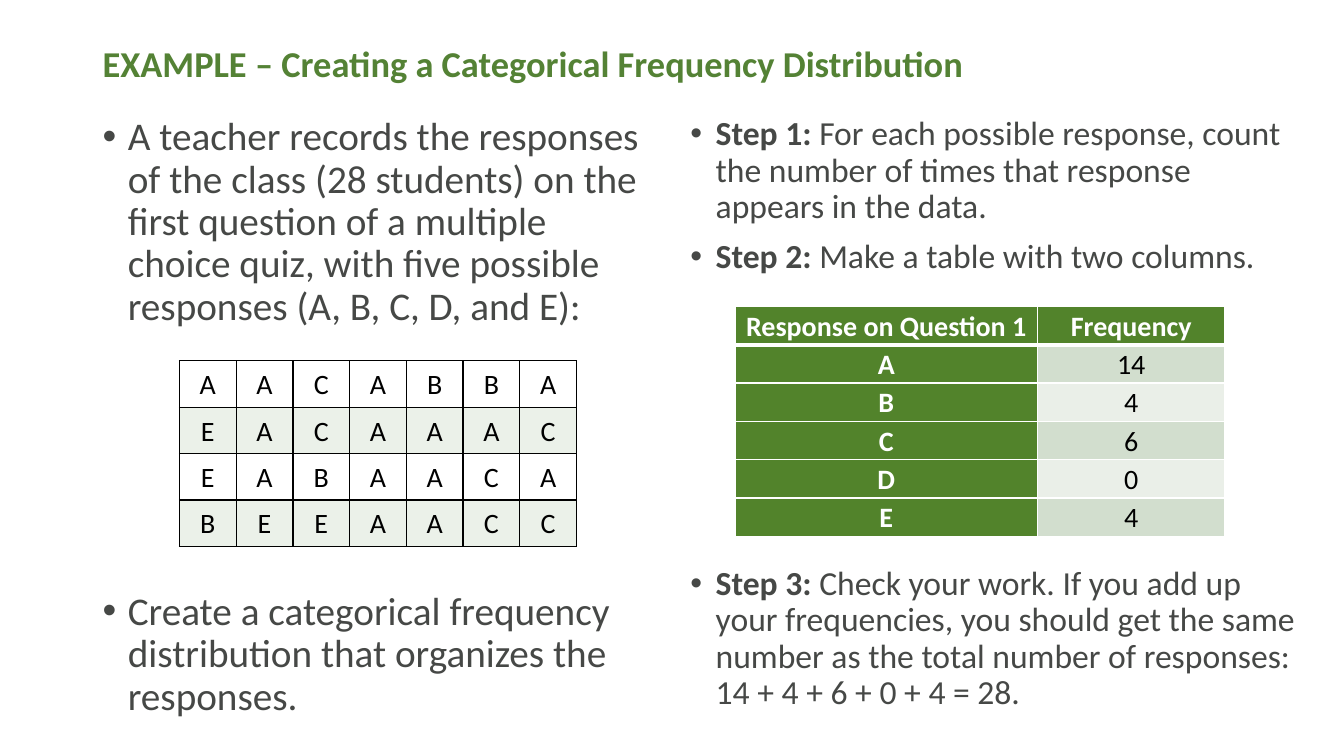
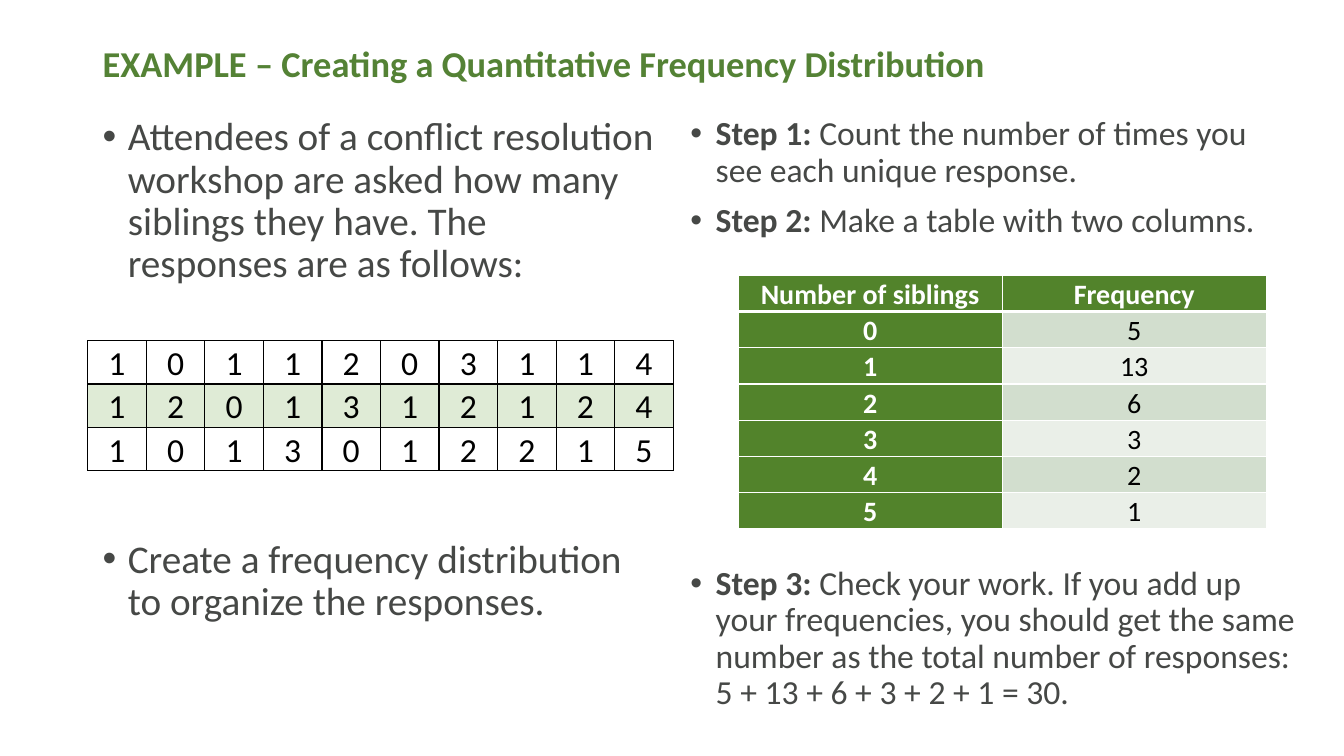
from lxml import etree
from pptx import Presentation
from pptx import util as u
from pptx.dml.color import RGBColor
from pptx.enum import text
from pptx.oxml.ns import qn

COLORS = {
    "title": "548235", "body": "464846", "black": "000000", "white": "FFFFFF",
    "header": "52832B", "band_dark": "D2DECE", "band_light": "EAEFE8",
}
FONT = "Calibri"
LEFT, RIGHT, TOP = 0.92, 6.75, 1.11
STEP_2 = ("Step 2:", " Make a table with two columns.")
CHECK = (" Check your work. If you add up your frequencies, you should get the same "
         "number as the total number of responses: ")

SLIDES = [
    {
        "title": "EXAMPLE – Creating a Categorical Frequency Distribution",
        "problem": "A teacher records the responses of the class (28 students) on the first "
                   "question of a multiple choice quiz, with five possible responses "
                   "(A, B, C, D, and E):",
        "data": ["AACABBA", "EACAAAC", "EABAACA", "BEEAACC"],
        "data_box": (1.78, 3.58, 3.94), "data_row": 0.46, "data_size": 20,
        "data_band": "EBF1E9",
        "task": "Create a categorical frequency distribution that organizes the responses.",
        "task_top": 5.82,
        "step_1": " For each possible response, count the number of times that response "
                  "appears in the data.",
        "frequencies": [("Response on Question 1", "Frequency"), ("A", "14"), ("B", "4"),
                        ("C", "6"), ("D", "0"), ("E", "4")],
        "frequency_place": (7.29, 3.04), "frequency_columns": (3, 1.86),
        "frequency_row": 0.38,
        "sum": "14 + 4 + 6 + 0 + 4 = 28.",
    },
    {
        "title": "EXAMPLE – Creating a Quantitative Frequency Distribution",
        "problem": "Attendees of a conflict resolution workshop are asked how many siblings "
                   "they have. The responses are as follows:",
        "data": ["1011203114", "1201312124", "1013012215"],
        "data_box": (0.87, 3.38, 5.81), "data_row": 0.43, "data_size": 24,
        "data_band": "DFEBD6",
        "task": "Create a frequency distribution to organize the responses.",
        "task_top": 5.3,
        "step_1": " Count the number of times you see each unique response.",
        "frequencies": [("Number of siblings", "Frequency"), ("0", "5"), ("1", "13"),
                        ("2", "6"), ("3", "3"), ("4", "2"), ("5", "1")],
        "frequency_place": (7.32, 2.73), "frequency_columns": (2.62, 2.62),
        "frequency_row": 0.36,
        "sum": "5 + 13 + 6 + 3 + 2 + 1 = 30.",
    },
]


def add_text(slide, box, paragraphs, size, color="body", bullets=True):
    """Add a text box; each paragraph is a (bold part, regular part) pair."""
    frame = slide.shapes.add_textbox(*map(u.Inches, box)).text_frame
    frame.word_wrap = True
    if not bullets:
        frame.vertical_anchor = text.MSO_ANCHOR.MIDDLE
    for index, parts in enumerate(paragraphs):
        paragraph = frame.add_paragraph() if index else frame.paragraphs[0]
        paragraph.line_spacing = 0.9
        if index:
            paragraph.space_before = u.Pt(10)
        if bullets:
            properties = paragraph._p.get_or_add_pPr()
            properties.set("marL", str(u.Inches(0.25)))
            properties.set("indent", str(u.Inches(-0.25)))
            etree.SubElement(properties, qn("a:buFont"), typeface="Arial")
            etree.SubElement(properties, qn("a:buChar"), char="•")
        for part, bold in zip(parts, (True, False)):
            if part:
                run = paragraph.add_run()
                run.text = part
                for name, value in {"name": FONT, "size": u.Pt(size), "bold": bold}.items():
                    setattr(run.font, name, value)
                run.font.color.rgb = RGBColor.from_string(COLORS[color])


def add_grid(slide, place, widths, row_height, rows, size, border, style):
    """Add a table; style(row, column) gives fill, text colour, bold and lower line width."""
    table = slide.shapes.add_table(
        len(rows), len(widths), *map(u.Inches, (*place, sum(widths), row_height * len(rows)))
    ).table
    table.first_row = table.horz_banding = False
    for column, width in zip(table.columns, widths):
        column.width = u.Inches(width)
    for row_index, values in enumerate(rows):
        table.rows[row_index].height = u.Inches(row_height)
        for column_index, value in enumerate(values):
            fill, color, bold, lower_line = style(row_index, column_index)
            cell = table.cell(row_index, column_index)
            cell_format = {
                "text": value, "vertical_anchor": text.MSO_ANCHOR.MIDDLE,
                "margin_left": u.Inches(0.07), "margin_right": u.Inches(0.07),
                "margin_top": 0, "margin_bottom": 0,
            }
            for name, setting in cell_format.items():
                setattr(cell, name, setting)
            properties = cell._tc.get_or_add_tcPr()
            for side, points in {"L": 1, "R": 1, "T": 1, "B": lower_line}.items():
                line = etree.SubElement(properties, qn(f"a:ln{side}"), w=str(u.Pt(points)))
                solid = etree.SubElement(line, qn("a:solidFill"))
                etree.SubElement(solid, qn("a:srgbClr"), val=COLORS[border])
            cell.fill.solid()
            cell.fill.fore_color.rgb = RGBColor.from_string(fill)
            paragraph = cell.text_frame.paragraphs[0]
            paragraph.alignment = text.PP_ALIGN.CENTER
            paragraph.line_spacing = 1.07
            font = paragraph.runs[0].font
            for name, setting in {"name": FONT, "size": u.Pt(size), "bold": bold}.items():
                setattr(font, name, setting)
            font.color.rgb = RGBColor.from_string(COLORS[color])


presentation = Presentation()
presentation.slide_width = u.Inches(13.33)
presentation.slide_height = u.Inches(7.5)

for content in SLIDES:
    slide = presentation.slides.add_slide(presentation.slide_layouts[6])
    add_text(slide, (LEFT, 0.4, 9.8, 0.5), [(content["title"], "")], 26, "title", bullets=False)

    add_text(slide, (LEFT, TOP, 5.67, 2.28), [("", content["problem"])], 28)
    left, top, width = content["data_box"]
    column_count = len(content["data"][0])
    add_grid(
        slide, (left, top), [width / column_count] * column_count, content["data_row"],
        content["data"], content["data_size"], "black",
        lambda row, column: (content["data_band"] if row % 2 else COLORS["white"],
                             "black", False, 1),
    )
    add_text(slide, (LEFT, content["task_top"], 5.67, 1.4), [("", content["task"])], 28)

    add_text(slide, (RIGHT, TOP, 6.12, 1.7), [("Step 1:", content["step_1"]), STEP_2], 24)
    add_grid(
        slide, content["frequency_place"], content["frequency_columns"],
        content["frequency_row"], content["frequencies"], 20, "white",
        lambda row, column: (
            (COLORS["header"], "white", True, 1 if row else 3) if row == 0 or column == 0
            else (COLORS["band_dark" if row % 2 else "band_light"], "black", False, 1)
        ),
    )
    add_text(slide, (RIGHT, 5.57, 6.31, 1.65), [("Step 3:", CHECK + content["sum"])], 24)

presentation.save("out.pptx")
